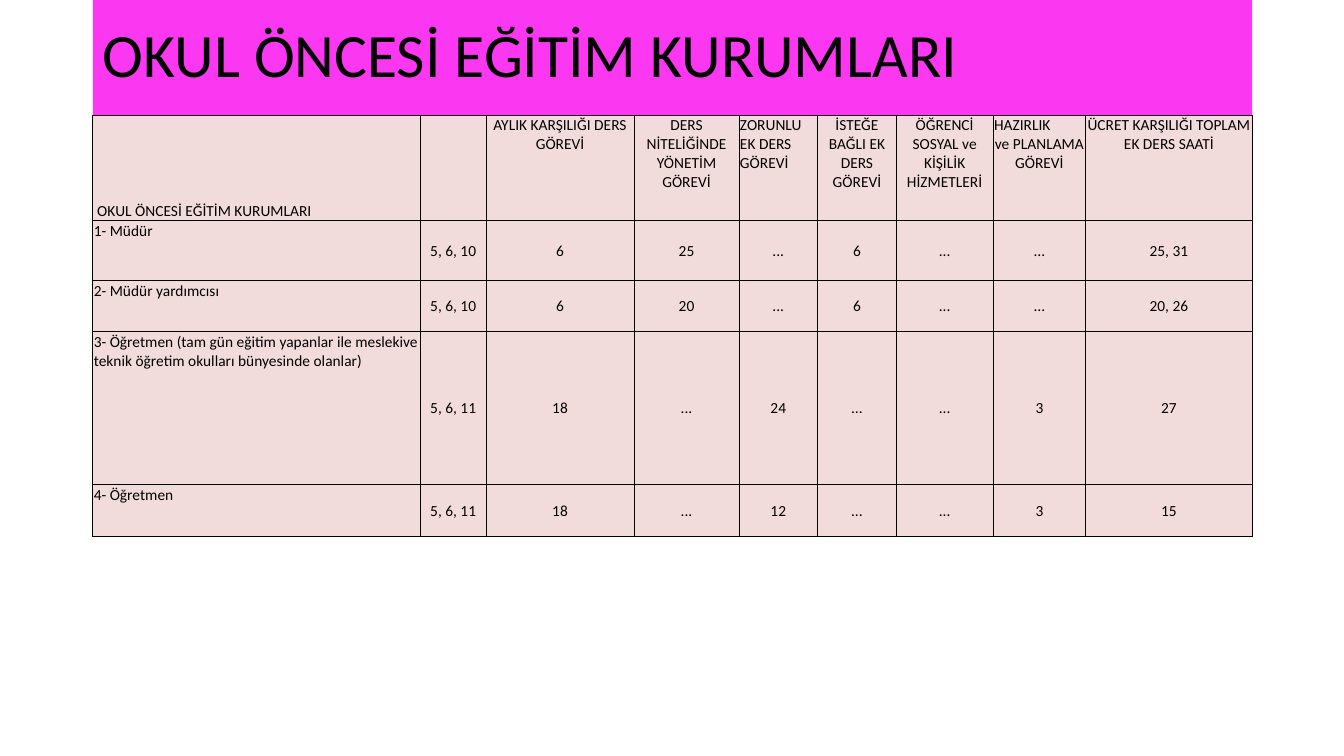
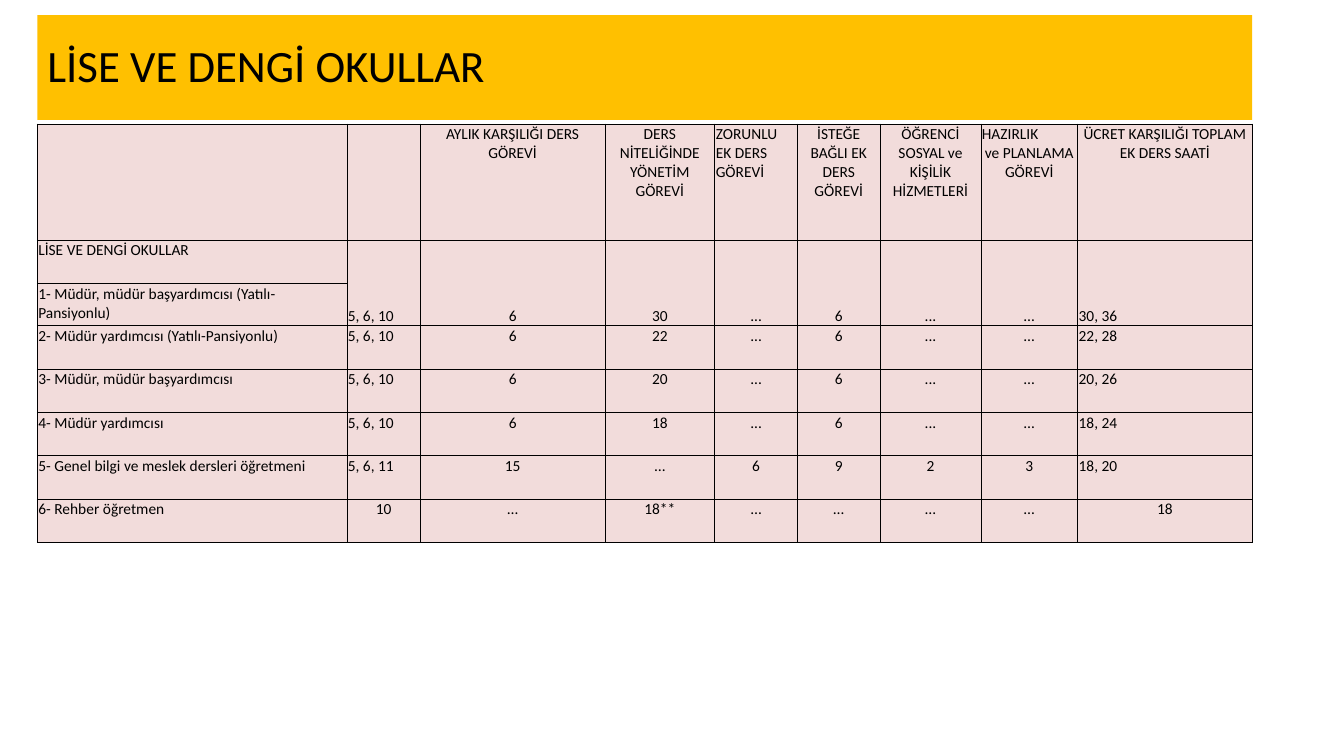
import pptx
import pptx.util
import pptx.dml.color
import pptx.enum.text
import pptx.oxml
import pptx.oxml.ns

Inches = pptx.util.Inches
RGBColor = pptx.dml.color.RGBColor
ALIGN = pptx.enum.text.PP_ALIGN
ANCHOR = pptx.enum.text.MSO_ANCHOR

# Shared look
FONT = "Calibri"
BLACK = RGBColor(0x00, 0x00, 0x00)
MAGENTA = RGBColor(0xFB, 0x37, 0xF2)
AMBER = RGBColor(0xFF, 0xC0, 0x00)
PALE_ROSE = RGBColor(0xF2, 0xDC, 0xDB)
CELL_SIZE = 11
BORDER_WIDTH = 0.5

# Content
DUTY_HEADERS = (
    "AYLIK KARŞILIĞI DERS GÖREVİ", "DERS NİTELİĞİNDE YÖNETİM GÖREVİ",
    "ZORUNLU EK DERS GÖREVİ", "İSTEĞE BAĞLI EK DERS GÖREVİ",
    "ÖĞRENCİ SOSYAL ve KİŞİLİK HİZMETLERİ",
    "HAZIRLIK\nve PLANLAMA GÖREVİ", "ÜCRET KARŞILIĞI TOPLAM EK DERS SAATİ",
)
REQUIRED_COLUMN = 4  # its heading is set left

# None marks a cell that continues the one above it
PRESCHOOL_ROWS = [
    (" OKUL ÖNCESİ EĞİTİM KURUMLARI", "", *DUTY_HEADERS),
    ("1- Müdür", "5, 6, 10", "6", "25", "...", "6", "...", "…", "25, 31"),
    ("2- Müdür yardımcısı", "5, 6, 10", "6", "20", "...", "6", "...", "…", "20, 26"),
    ("3- Öğretmen (tam gün eğitim yapanlar ile meslekive teknik öğretim okulları "
     "bünyesinde olanlar)", "5, 6, 11", "18", "...", "24", "…", "...", "3", "27"),
    ("4- Öğretmen", "5, 6, 11", "18", "...", "12", "...", "...", "3", "15"),
]
HIGH_SCHOOL_ROWS = [
    ("", "", *DUTY_HEADERS),
    ("LİSE VE DENGİ OKULLAR", "5, 6, 10", "6", "30", "...", "6", "...", "…", "30, 36"),
    ("1- Müdür, müdür başyardımcısı (Yatılı-Pansiyonlu)", *[None] * 8),
    ("2- Müdür yardımcısı (Yatılı-Pansiyonlu)",
     "5, 6, 10", "6", "22", "...", "6", "...", "…", "22, 28"),
    ("3- Müdür, müdür başyardımcısı",
     "5, 6, 10", "6", "20", "...", "6", "...", "…", "20, 26"),
    ("4- Müdür yardımcısı", "5, 6, 10", "6", "18", "...", "6", "...", "…", "18, 24"),
    ("5- Genel bilgi ve meslek dersleri öğretmeni",
     "5, 6, 11", "15", "…", "6", "9", "2", "3", "18, 20"),
    ("6- Rehber öğretmen", "10", "…", "18**", "…", "…", "…", "…", "18"),
]
SLIDES = [
    dict(title="OKUL ÖNCESİ EĞİTİM KURUMLARI", title_size=44, band_color=MAGENTA,
         left=0.92, width=11.5, band_top=0, band_height=1.14, table_top=1.14,
         columns=(3.25, 0.65, 1.47, 1.04, 0.78, 0.78, 0.96, 0.92, 1.65),
         heights=(1.05, 0.59, 0.51, 1.52, 0.51), rows=PRESCHOOL_ROWS,
         left_columns=(0,), value_anchor=ANCHOR.MIDDLE),
    dict(title="LİSE VE DENGİ OKULLAR", title_size=32, band_color=AMBER,
         left=0.37, width=12.05, band_top=0.15, band_height=1.04, table_top=1.23,
         columns=(3.07, 0.73, 1.83, 1.09, 0.82, 0.82, 1, 0.96, 1.73),
         heights=(1.15, 0.43, 0.42, *[0.43] * 5), rows=HIGH_SCHOOL_ROWS,
         left_columns=(0, 1, 8), value_anchor=ANCHOR.TOP),
]


def write_text(text_frame, text, size=CELL_SIZE, align=ALIGN.LEFT, line_spacing=None):
    paragraph = text_frame.paragraphs[0]
    paragraph.alignment = align
    paragraph.line_spacing = line_spacing
    run = paragraph.add_run()
    run.text = text
    run.font.name = FONT
    run.font.size = pptx.util.Pt(size)
    run.font.color.rgb = BLACK


def add_borders(cell):
    properties = cell._tc.get_or_add_tcPr()
    width = pptx.util.Pt(BORDER_WIDTH)
    for side in ("lnL", "lnR", "lnT", "lnB"):
        properties.append(pptx.oxml.parse_xml(
            f'<a:{side} {pptx.oxml.ns.nsdecls("a")} w="{width}"><a:solidFill>'
            f'<a:srgbClr val="{BLACK}"/></a:solidFill></a:{side}>'))


def cell_layout(row, column, content):
    """Return the alignment and anchor of a cell."""
    rows = content["rows"]
    if row == 0:
        left = column in (0, REQUIRED_COLUMN)
        return (ALIGN.LEFT if left else ALIGN.CENTER,
                ANCHOR.BOTTOM if column == 0 else ANCHOR.TOP)
    if column == 0:
        return ALIGN.LEFT, ANCHOR.TOP
    # Single values, such as "10", stay centred in the left-set columns
    left = column in content["left_columns"] and "," in rows[row][column]
    merged = row + 1 < len(rows) and rows[row + 1][column] is None
    return (ALIGN.LEFT if left else ALIGN.CENTER,
            ANCHOR.BOTTOM if merged else content["value_anchor"])


def add_title(slide, content):
    title = slide.shapes.title
    title.left, title.top = Inches(content["left"]), Inches(content["band_top"])
    title.width, title.height = Inches(content["width"]), Inches(content["band_height"])
    title.fill.solid()
    title.fill.fore_color.rgb = content["band_color"]
    title.text_frame.vertical_anchor = ANCHOR.MIDDLE
    title.text_frame.auto_size = pptx.enum.text.MSO_AUTO_SIZE.NONE
    write_text(title.text_frame, content["title"], size=content["title_size"],
               line_spacing=0.9)


def add_duty_table(slide, content):
    rows, columns, heights = content["rows"], content["columns"], content["heights"]
    table = slide.shapes.add_table(
        len(rows), len(columns), Inches(content["left"]), Inches(content["table_top"]),
        Inches(content["width"]), Inches(sum(heights))).table
    table.first_row = table.horz_banding = False
    for column, width in zip(table.columns, columns):
        column.width = Inches(width)
    for row, height in zip(table.rows, heights):
        row.height = Inches(height)

    for row, values in enumerate(rows):
        for column, text in enumerate(values):
            cell = table.cell(row, column)
            add_borders(cell)
            cell.fill.solid()
            cell.fill.fore_color.rgb = PALE_ROSE
            cell.margin_left = cell.margin_right = cell.margin_top = Inches(0.01)
            cell.margin_bottom = 0
            if text is None:
                table.cell(row - 1, column).merge(cell)
            elif text:
                align, cell.vertical_anchor = cell_layout(row, column, content)
                write_text(cell.text_frame, text, align=align)


def main():
    presentation = pptx.Presentation()
    presentation.slide_width = Inches(13.33)
    presentation.slide_height = Inches(7.5)
    title_only = presentation.slide_layouts[5]
    for content in SLIDES:
        slide = presentation.slides.add_slide(title_only)
        add_title(slide, content)
        add_duty_table(slide, content)
    presentation.save("out.pptx")


if __name__ == "__main__":
    main()
